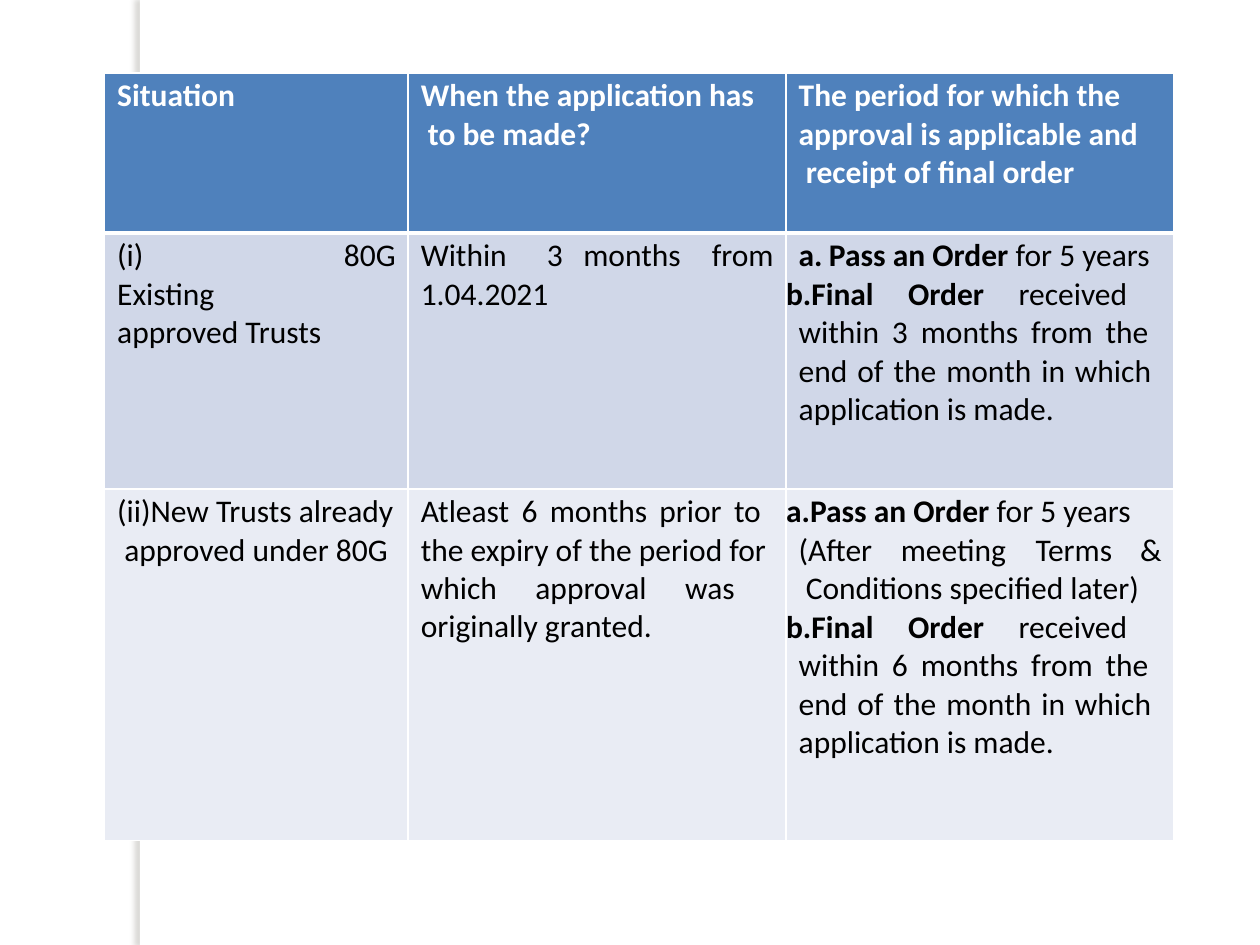
"""Build the slide with the table of 80G approval situations."""
from lxml import etree
from pptx import Presentation
from pptx.dml.color import RGBColor
from pptx.enum import shapes, text
from pptx.oxml import parse_xml
from pptx.oxml.ns import nsdecls, qn
from pptx.util import Inches, Pt

WHITE = RGBColor(0xFF, 0xFF, 0xFF)
BLACK = RGBColor(0, 0, 0)
BLUE = RGBColor(0x4F, 0x81, 0xBC)
BAND_DARK = RGBColor(0xD0, 0xD7, 0xE8)
BAND_LIGHT = RGBColor(0xE9, 0xEC, 0xF4)
SHADOW = RGBColor(0x73, 0x6F, 0x63)

COLS = [1.81, 0.6, 1.27, 1.02, 0.71, 3.08]
ROWS = [(1.27, BLUE), (2.03, BAND_DARK), (2.79, BAND_LIGHT)]
SPANS = [(0, 1), (2, 4)]
EDGES = [3, 1, 1, 1]
LEFT, JUST = text.PP_ALIGN.LEFT, text.PP_ALIGN.JUSTIFY
FINAL = "received  within {} months from the  end of the month in which  application is made."


def add_paragraph(tf, runs, color=BLACK, left=0.1, right=0.1, first=0, align=LEFT,
                  before=2.4, tabs=(), numbered=False):
    p = tf.paragraphs[0] if not tf.paragraphs[0].runs else tf.add_paragraph()
    p.alignment, p.space_before = align, Pt(before)
    pPr = p._p.get_or_add_pPr()
    for name, value in {"marL": left, "marR": right, "indent": first, "defTabSz": 1}.items():
        pPr.set(name, str(Inches(value)))
    if numbered:
        etree.SubElement(pPr, qn("a:buAutoNum"), type="alphaLcPeriod")
    if tabs:
        stops = etree.SubElement(pPr, qn("a:tabLst"))
        for tab in tabs:
            etree.SubElement(stops, qn("a:tab"), pos=str(Inches(tab)), algn="l")
    for words, bold in runs:
        r = p.add_run()
        r.text = words
        for name, value in {"name": "Calibri", "size": Pt(18), "bold": bold}.items():
            setattr(r.font, name, value)
        r.font.color.rgb = color


def set_borders(cell, widths):
    tcPr = cell._tc.get_or_add_tcPr()
    for i, (side, width) in enumerate(widths.items()):
        paint = f'<a:solidFill><a:srgbClr val="{WHITE}"/></a:solidFill>' if width else "<a:noFill/>"
        tcPr.insert(i, parse_xml(
            f'<a:ln{side} {nsdecls("a")} w="{Pt(width)}">{paint}</a:ln{side}>'))


prs = Presentation()
prs.slide_width, prs.slide_height = Inches(10), Inches(7.5)
s = prs.slides.add_slide(prs.slide_layouts[6])

strip = s.shapes.add_shape(shapes.MSO_SHAPE.RECTANGLE, Inches(1.11), 0, Inches(0.08), Inches(7.5))
strip.fill.solid()
strip.fill.fore_color.rgb = WHITE
strip.line.fill.background()
strip._element.spPr.append(parse_xml(
    f'<a:effectLst {nsdecls("a")}><a:outerShdw blurRad="{Pt(3)}" dist="{Pt(3)}" dir="10800000">'
    f'<a:srgbClr val="{SHADOW}"><a:alpha val="25000"/></a:srgbClr></a:outerShdw></a:effectLst>'))

table = s.shapes.add_table(len(ROWS), len(COLS), Inches(0.83), Inches(0.58),
                           Inches(sum(COLS)), Inches(6.09)).table
for column, width in zip(table.columns, COLS):
    column.width = Inches(width)

for row, (height, color) in enumerate(ROWS):
    table.rows[row].height = Inches(height)
    for col in range(len(COLS)):
        cell = table.cell(row, col)
        for side in ("left", "right", "bottom"):
            setattr(cell, f"margin_{side}", 0)
        cell.margin_top = Inches(0.03)
        cell.fill.solid()
        cell.fill.fore_color.rgb = color
        set_borders(cell, {"L": int(col in (0, 2, 5)), "R": int(col in (1, 4, 5)),
                           "T": EDGES[row - 1], "B": EDGES[row]})
    if row != 1:
        for start, end in SPANS:
            table.cell(row, start).merge(table.cell(row, end))

order_a = [("Pass an Order ", True), ("for 5 years", False)]
terms = [order_a[0], ("for 5 years  (After\tmeeting\tTerms\t&  Conditions specified later)", False)]
order_b = {"first": -0.1, "align": JUST, "before": 0.1, "tabs": [0.54], "numbered": True}
contents = [
    (0, 0, [("Situation", True)], {"color": WHITE}),
    (0, 2, [("When the application has  to be made?", True)], {"color": WHITE, "right": 0.2}),
    (0, 5, [("The period for which the  approval is applicable and  receipt of final order", True)],
     {"color": WHITE, "right": 0.25}),
    (1, 0, [("(i)\tExisting", False)], {"right": 0, "tabs": [0.72]}),
    (1, 0, [("approved Trusts", False)], {"right": 0, "before": 0.1}),
    (1, 1, [("80G", False)], {"left": 0.09, "right": 0}),
    (1, 2, [("Within\t3", False)], {"right": 0, "tabs": [1.02]}),
    (1, 2, [("1.04.2021", False)], {"right": 0, "before": 0.1}),
    (1, 3, [("months", False)], {"left": 0.12, "right": 0}),
    (1, 4, [("from", False)], {"left": 0.12, "right": 0}),
    (1, 5, order_a, {"left": 0.34, "first": -0.24, "align": JUST, "tabs": [0.34],
                     "numbered": True}),
    (1, 5, [("Final Order ", True), (FINAL.format(3), False)], order_b),
    (2, 0, [("(ii)New Trusts already  approved under 80G", False)], {}),
    (2, 2, [("Atleast 6 months prior to  the expiry of the period for  which approval was  "
             "originally granted.", False)], {"align": JUST}),
    (2, 5, terms, {"right": 0.05, "first": -0.1, "tabs": [0.34, 0.91, 1.98, 2.81],
                   "numbered": True}),
    (2, 5, [("Final Order ", True), (FINAL.format(6), False)], order_b),
]
for row, col, runs, style in contents:
    add_paragraph(table.cell(row, col).text_frame, runs, **style)

prs.save("out.pptx")
